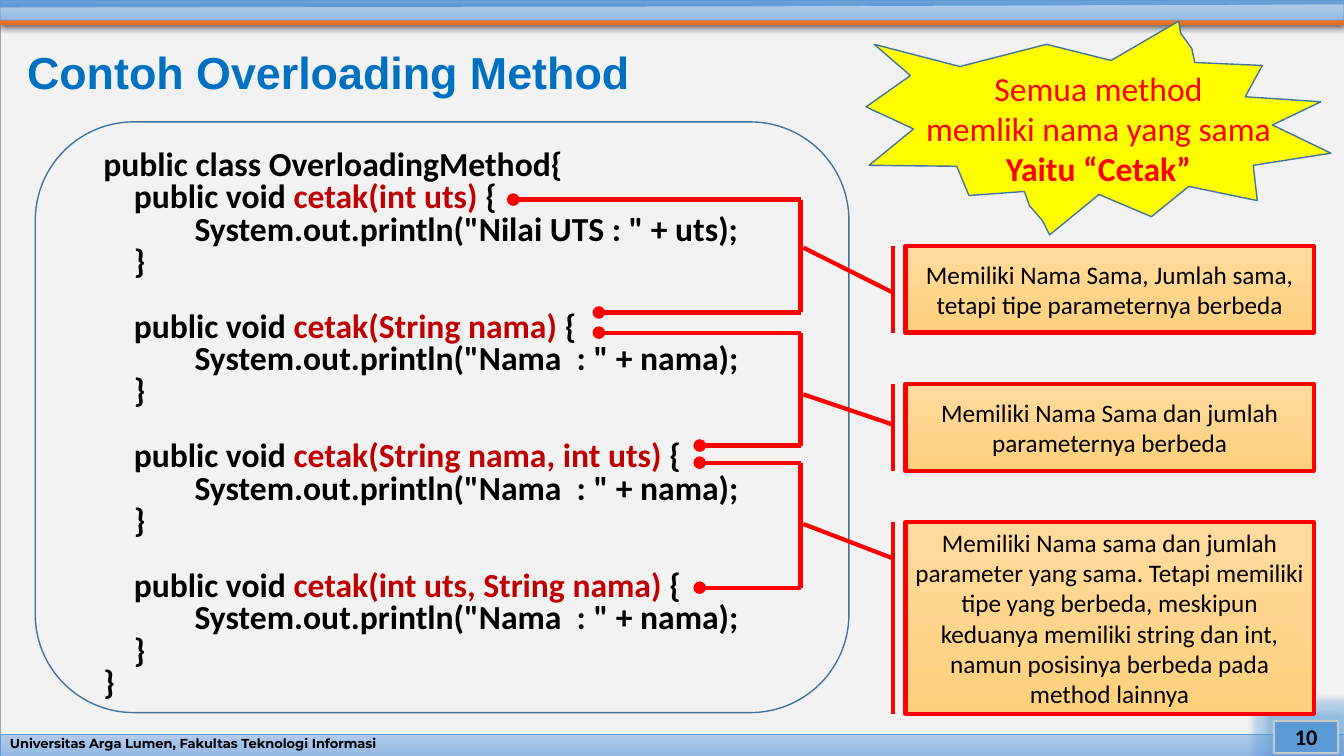
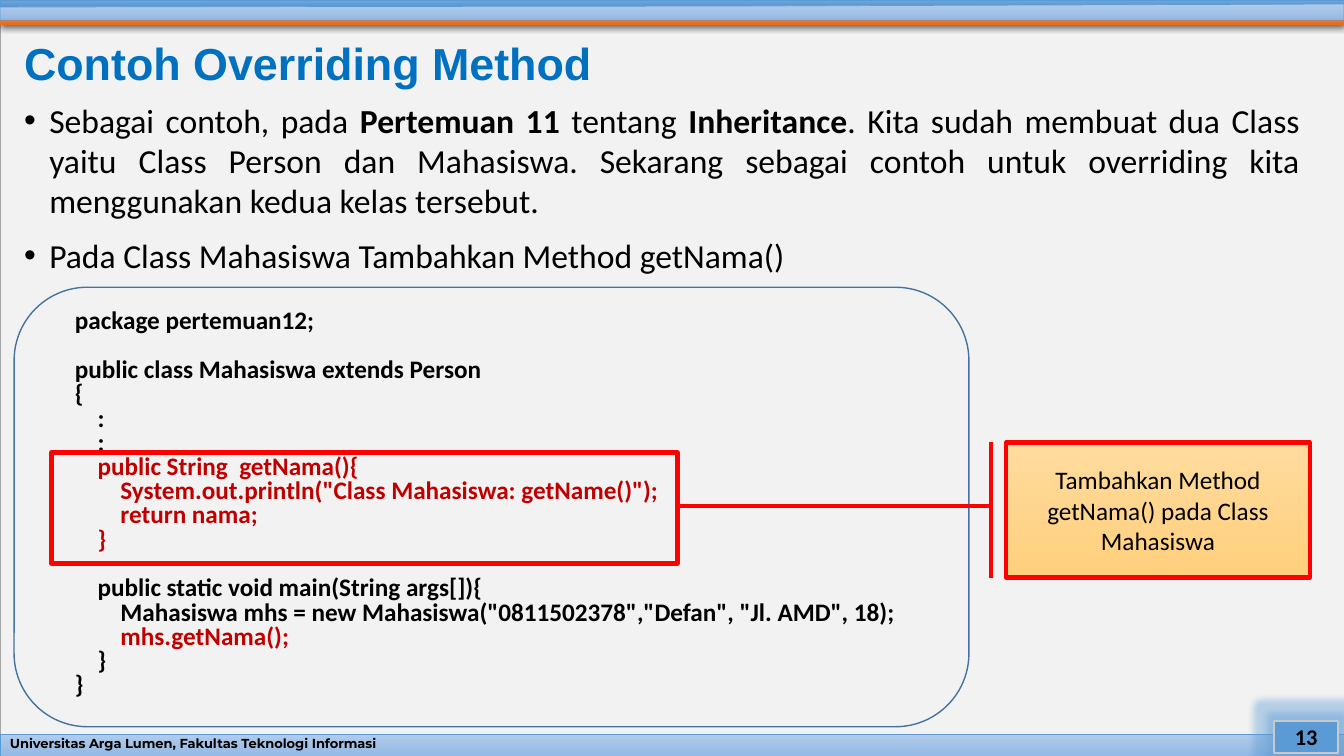
"""Build two lecture slides on method overloading and overriding."""
from lxml.etree import SubElement
from pptx import Presentation
from pptx.dml.color import RGBColor
from pptx.enum.shapes import MSO_CONNECTOR, MSO_SHAPE
from pptx.enum.text import MSO_ANCHOR, PP_ALIGN
from pptx.oxml.ns import qn
from pptx.util import Inches, Pt

COLORS = {
    "page": "F2F2F2", "page_edge": "A5A5A5", "blue": "5B9BD5", "badge_edge": "C9C9C9",
    "title": "0070C0", "text": "000000", "accent": "C00000", "red": "FF0000",
    "yellow": "FFFF00", "outline": "43739E", "shadow": "000000",
    "orange_top": "F18C57", "orange_end": "E56C19", "pale_top": "B1CBE9", "pale_end": "93B9E4",
    "deep_top": "71A6DB", "deep_end": "448ACA", "note_top": "FFDB9E", "note_end": "FFD07C",
}
RGB = {name: RGBColor.from_string(value) for name, value in COLORS.items()}


def add_figure(slide, outline, box=None, fill=None, line=None, width=1):
    """Draw a preset in a box or a polygon through points; a pair of fills is a gradient."""
    if box:
        figure = slide.shapes.add_shape(outline, *map(Inches, box))
    else:
        points = [(Inches(x), Inches(y)) for x, y in outline]
        builder = slide.shapes.build_freeform(*points[0])
        builder.add_line_segments(points[1:], close=True)
        figure = builder.convert_to_shape()
    figure.shadow.inherit = False
    if fill is None:
        figure.fill.background()
    elif isinstance(fill, tuple):
        figure.fill.gradient()
        figure.fill.gradient_angle = 270
        for stop, name in zip(figure.fill.gradient_stops, fill):
            stop.color.rgb = RGB[name]
    else:
        figure.fill.solid()
        figure.fill.fore_color.rgb = RGB[fill]
    if line:
        figure.line.color.rgb = RGB[line]
        figure.line.width = Pt(width)
    else:
        figure.line.fill.background()
    return figure


def write(shape, text, size, color="text", align=PP_ALIGN.CENTER, bold=False, font="Calibri",
          spacing=1.0, anchor=MSO_ANCHOR.MIDDLE):
    """Write lines; bars mark emphasis, leading spaces indent, an empty line is a gap."""
    frame = shape.text_frame
    frame.word_wrap = True
    frame.vertical_anchor = anchor
    gap = 0
    paragraph = None
    for line in text.strip().splitlines():
        if not line:
            gap = size * 0.976
            continue
        paragraph = frame.add_paragraph() if paragraph else frame.paragraphs[0]
        paragraph.alignment = align
        paragraph.line_spacing = spacing
        paragraph.space_before = Pt(gap)
        gap = 0
        paragraph.font.size = Pt(size)
        paragraph.font.name = font
        paragraph.font.bold = bold
        paragraph.font.color.rgb = RGB[color]
        content = line.lstrip()
        indent = (len(line) - len(content)) * size * 0.226
        paragraph._p.get_or_add_pPr().set("marL", str(Pt(indent)))
        for position, part in enumerate(content.split("|")):
            if part:
                run = paragraph.add_run()
                run.text = part
                if position % 2 and bold:
                    run.font.color.rgb = RGB["accent"]
                elif position % 2:
                    run.font.bold = True


OVERLOADING_CODE = """
public class OverloadingMethod{
    public void |cetak(int uts)| {
            System.out.println("Nilai UTS : " + uts);
    }

    public void |cetak(String nama)| {
            System.out.println("Nama  : " + nama);
    }

    public void |cetak(String nama, int uts)| {
            System.out.println("Nama  : " + nama);
    }

    public void |cetak(int uts, String nama)| {
            System.out.println("Nama  : " + nama);
    }
}
"""
OVERRIDING_CODE = """
package pertemuan12;

public class Mahasiswa extends Person
{
    :
    :
    |public String  getNama(){|
        |System.out.println("Class Mahasiswa: getName()");|
        |return nama;|
    |}|

    public static void main(String args[]){
        Mahasiswa mhs = new Mahasiswa("0811502378","Defan", "Jl. AMD", 18);
        |mhs.getNama();|
    }
}
"""
INTRODUCTION = """
Sebagai contoh, pada |Pertemuan 11| tentang |Inheritance|. Kita sudah membuat dua Class yaitu \
Class Person dan Mahasiswa. Sekarang sebagai contoh untuk overriding kita menggunakan kedua \
kelas tersebut.
Pada Class Mahasiswa Tambahkan Method getNama()
"""

presentation = Presentation()
presentation.slide_width = Inches(13.33)
presentation.slide_height = Inches(7.5)
layout = presentation.slide_layouts[6]
for placeholder in list(layout.placeholders):
    layout.shapes.element.remove(placeholder.element)
overloading = presentation.slides.add_slide(layout)
overriding = presentation.slides.add_slide(layout)

page = add_figure(overloading, MSO_SHAPE.RECTANGLE, (0, 0.04, 13.33, 7.46),
                  "page", "page_edge", 0.5)
orange_band = add_figure(overloading, [(13.33, 0.25), (0, 0.25), (0.03, 0.12), (13.33, 0.12)],
                         fill=("orange_top", "orange_end"))
shadow = SubElement(orange_band.element.spPr.find(qn("a:effectLst")), qn("a:outerShdw"),
                    blurRad=str(Pt(4.5)), dist=str(Pt(1.5)), dir="5400000", rotWithShape="0")
shadow_color = SubElement(shadow, qn("a:srgbClr"), val=COLORS["shadow"])
SubElement(shadow_color, qn("a:alpha"), val="63000")
footer_band = add_figure(overloading, MSO_SHAPE.RECTANGLE, (0, 7.29, 13.33, 0.21),
                         ("pale_top", "pale_end"), "blue", 0.5)
top_band = add_figure(overloading, MSO_SHAPE.RECTANGLE, (0, 0, 13.33, 0.11),
                      ("deep_top", "deep_end"), "blue", 0.5)
pale_band = add_figure(overloading,
                       [(13.33, 0.2), (0, 0.2), (0, 0.07), (7.5, 0.06), (13.33, 0.04)],
                       fill=("pale_top", "pale_end"), line="blue", width=0.5)
write(footer_band, "Universitas Arga Lumen, Fakultas Teknologi Informasi", 9.3,
      align=PP_ALIGN.LEFT, bold=True, font="Montserrat", spacing=0.7)
for band in (page, orange_band, footer_band, top_band, pale_band):
    layout.shapes.element.append(band.element)

for slide, number, heading, heading_box, code, code_box, code_size, code_anchor in (
    (overloading, "10", "Contoh Overloading Method", (0.17, 0.4, 8.4, 0.68),
     OVERLOADING_CODE, (0.35, 1.21, 8.07, 5.86), 24, MSO_ANCHOR.TOP),
    (overriding, "13", "Contoh Overriding Method", (0.14, 0.31, 9.02, 0.68),
     OVERRIDING_CODE, (0.14, 2.85, 9.47, 4.36), 18, MSO_ANCHOR.MIDDLE),
):
    badge = add_figure(slide, MSO_SHAPE.RECTANGLE, (12.64, 7.15, 0.63, 0.32),
                       "blue", "badge_edge", 1.5)
    glow = SubElement(badge.element.spPr.find(qn("a:effectLst")), qn("a:glow"),
                      rad=str(Inches(0.14)))
    glow_color = SubElement(glow, qn("a:srgbClr"), val=COLORS["blue"])
    SubElement(glow_color, qn("a:alpha"), val="40000")
    write(badge, number, 16, bold=True)
    title = slide.shapes.add_textbox(*map(Inches, heading_box))
    write(title, heading, 32, "title", PP_ALIGN.LEFT, True, "Arial", 0.9)
    panel = add_figure(slide, MSO_SHAPE.ROUNDED_RECTANGLE, code_box, line="outline")
    panel.text_frame.margin_left = panel.text_frame.margin_right = Inches(0.39)
    panel.text_frame.margin_top = 0
    write(panel, code, code_size, align=PP_ALIGN.JUSTIFY, bold=True, spacing=0.8,
          anchor=code_anchor)

burst = add_figure(overloading, [
    (11.02, 0.6), (11.69, 0.21), (11.71, 0.33), (11.82, 0.48), (11.85, 0.62), (12.52, 0.65),
    (12.35, 0.96), (13.1, 1.01), (12.62, 1.24), (13.2, 1.52), (12.43, 1.64), (12.47, 1.99),
    (11.79, 1.85), (11.42, 2.15), (10.9, 1.93), (10.41, 2.33), (10.34, 2.19), (10.21, 2.04),
    (10.16, 1.9), (9.61, 1.94), (9.49, 1.65), (8.62, 1.64), (9.06, 1.28), (8.59, 1.06),
    (9.03, 0.75), (8.67, 0.44), (9.52, 0.66), (10.38, 0.44),
], fill="yellow", line="outline")
write(burst, "Semua method\nmemliki nama yang sama\n|Yaitu “Cetak”|", 24, "red")

for slide, note_box, pointer, note in (
    (overloading, (8.98, 2.44, 4.05, 0.86), (0.54, -0.03, 0.02, -0.25),
     "Memiliki Nama Sama, Jumlah sama, tetapi tipe parameternya berbeda"),
    (overloading, (8.98, 3.81, 4.05, 0.86), (0.47, -0.03, 0.12, -0.25),
     "Memiliki Nama Sama dan jumlah parameternya berbeda"),
    (overloading, (8.98, 5.18, 4.05, 1.9), (0.19, -0.03, 0.01, -0.25),
     "Memiliki Nama sama dan jumlah parameter yang sama. Tetapi memiliki tipe yang berbeda, "
     "meskipun keduanya memiliki string dan int, namun posisinya berbeda pada method lainnya"),
    (overriding, (9.98, 4.39, 3.01, 1.34), (0.47, -0.05, 0.47, -1.08),
     "Tambahkan Method getNama() pada Class Mahasiswa"),
):
    callout = add_figure(slide, MSO_SHAPE.LINE_CALLOUT_1_BORDER_AND_ACCENT_BAR, note_box,
                         ("note_top", "note_end"), "red", 3)
    for index, value in enumerate(pointer):
        callout.adjustments[index] = value
    write(callout, note, 18)

SPINE = 7.94
for first_x, first_y, second_x, second_y in (
    (5.09, 1.98, 5.94, 3.1), (5.94, 3.3, 6.94, 4.42), (6.94, 4.59, 6.94, 5.83),
):
    for start_x, start_y, end_y, dotted in (
        (first_x, first_y, first_y, True),
        (second_x, second_y, second_y, True),
        (SPINE, first_y, second_y, False),
    ):
        link = overloading.shapes.add_connector(
            MSO_CONNECTOR.STRAIGHT, Inches(start_x), Inches(start_y), Inches(SPINE), Inches(end_y))
        link.line.color.rgb = RGB["red"]
        link.line.width = Pt(3)
        if dotted:
            SubElement(link.get_or_add_ln(), qn("a:headEnd"), type="oval")
        SubElement(link.element.spPr, qn("a:effectLst"))

introduction = overriding.shapes.add_textbox(*map(Inches, (0.14, 0.94, 12.85, 2.11)))
write(introduction, INTRODUCTION, 24, align=PP_ALIGN.JUSTIFY, anchor=MSO_ANCHOR.TOP)
for paragraph in introduction.text_frame.paragraphs:
    paragraph.space_before = Pt(10)
    properties = paragraph._p.get_or_add_pPr()
    properties.set("marL", str(Inches(0.25)))
    properties.set("indent", str(Inches(-0.25)))
    bullet_font = SubElement(properties, qn("a:buFont"), typeface="Arial")
    bullet = SubElement(properties, qn("a:buChar"), char="•")
    properties.find(qn("a:defRPr")).addprevious(bullet_font)
    bullet_font.addnext(bullet)

add_figure(overriding, MSO_SHAPE.RECTANGLE, (0.51, 4.49, 6.21, 1.1), line="red", width=3)

presentation.save("out.pptx")
